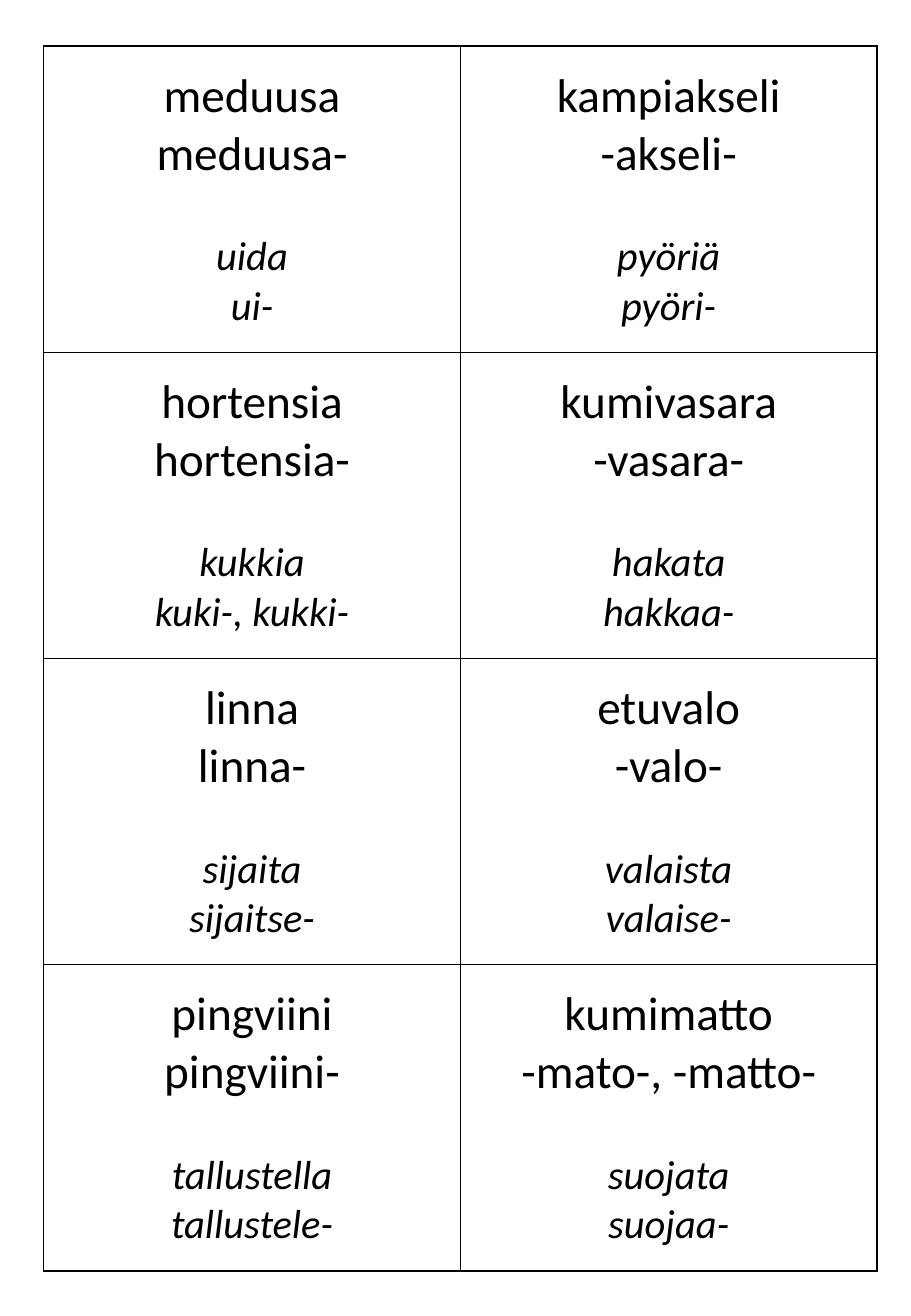
"""Builds a page of Finnish word cards, each pairing a noun with a verb."""
from lxml import etree
from pptx import Presentation
from pptx.dml.color import RGBColor
from pptx.enum.text import MSO_ANCHOR, PP_ALIGN
from pptx.oxml.ns import qn
from pptx.util import Emu, Pt

CENTER = PP_ALIGN.CENTER
MIDDLE = MSO_ANCHOR.MIDDLE
BLACK = RGBColor(0x00, 0x00, 0x00)
PX = 9144
BLANK_LAYOUT = 6

CARDS = [
    [("meduusa", "meduusa-", "uida", "ui-"),
     ("kampiakseli", "-akseli-", "pyöriä", "pyöri-")],
    [("hortensia", "hortensia-", "kukkia", "kuki-, kukki-"),
     ("kumivasara", "-vasara-", "hakata", "hakkaa-")],
    [("linna", "linna-", "sijaita", "sijaitse-"),
     ("etuvalo", "-valo-", "valaista", "valaise-")],
    [("pingviini", "pingviini-", "tallustella", "tallustele-"),
     ("kumimatto", "-mato-, -matto-", "suojata", "suojaa-")],
]


def px(n):
    return Emu(n * PX)


class CardPage:
    font = "Calibri"
    noun_size = Pt(28)
    verb_size = Pt(24)
    verb_gap = Pt(29.3)
    border = Pt(1)

    def __init__(self, s):
        self.s = s

    def table(self, x, y, col_w, row_h, cards):
        rows, cols = len(cards), len(cards[0])
        frame = self.s.shapes.add_table(
            rows, cols, px(x), px(y), px(cols * col_w), px(rows * row_h))
        table = frame.table
        table.first_row = table.horz_banding = False
        for col in table.columns:
            col.width = px(col_w)
        for row, row_cards in zip(table.rows, cards):
            row.height = px(row_h)
            for cell, words in zip(row.cells, row_cards):
                self.card(cell, words)

    def card(self, cell, words):
        cell.vertical_anchor = MIDDLE
        cell.fill.background()
        self.borders(cell)
        tf = cell.text_frame
        for i, word in enumerate(words):
            p = tf.add_paragraph() if i else tf.paragraphs[0]
            p.alignment = CENTER
            if i == 2:
                p.space_before = self.verb_gap
            self.run(p, word, is_verb=i >= 2)

    def run(self, p, text, is_verb):
        r = p.add_run()
        r.text = text
        r.font.name = self.font
        r.font.size = self.verb_size if is_verb else self.noun_size
        r.font.italic = is_verb
        r.font.bold = False
        r.font.color.rgb = BLACK

    def borders(self, cell):
        tc_pr = cell._tc.get_or_add_tcPr()
        for i, side in enumerate("LRTB"):
            ln = etree.Element(qn(f"a:ln{side}"), w=str(self.border))
            fill = etree.SubElement(ln, qn("a:solidFill"))
            etree.SubElement(fill, qn("a:srgbClr"), val=str(BLACK))
            tc_pr.insert(i, ln)


def main():
    prs = Presentation()
    prs.slide_width, prs.slide_height = px(750), px(1083)
    s = prs.slides.add_slide(prs.slide_layouts[BLANK_LAYOUT])
    CardPage(s).table(36, 38, 343, 252, CARDS)
    prs.save("out.pptx")


if __name__ == "__main__":
    main()
